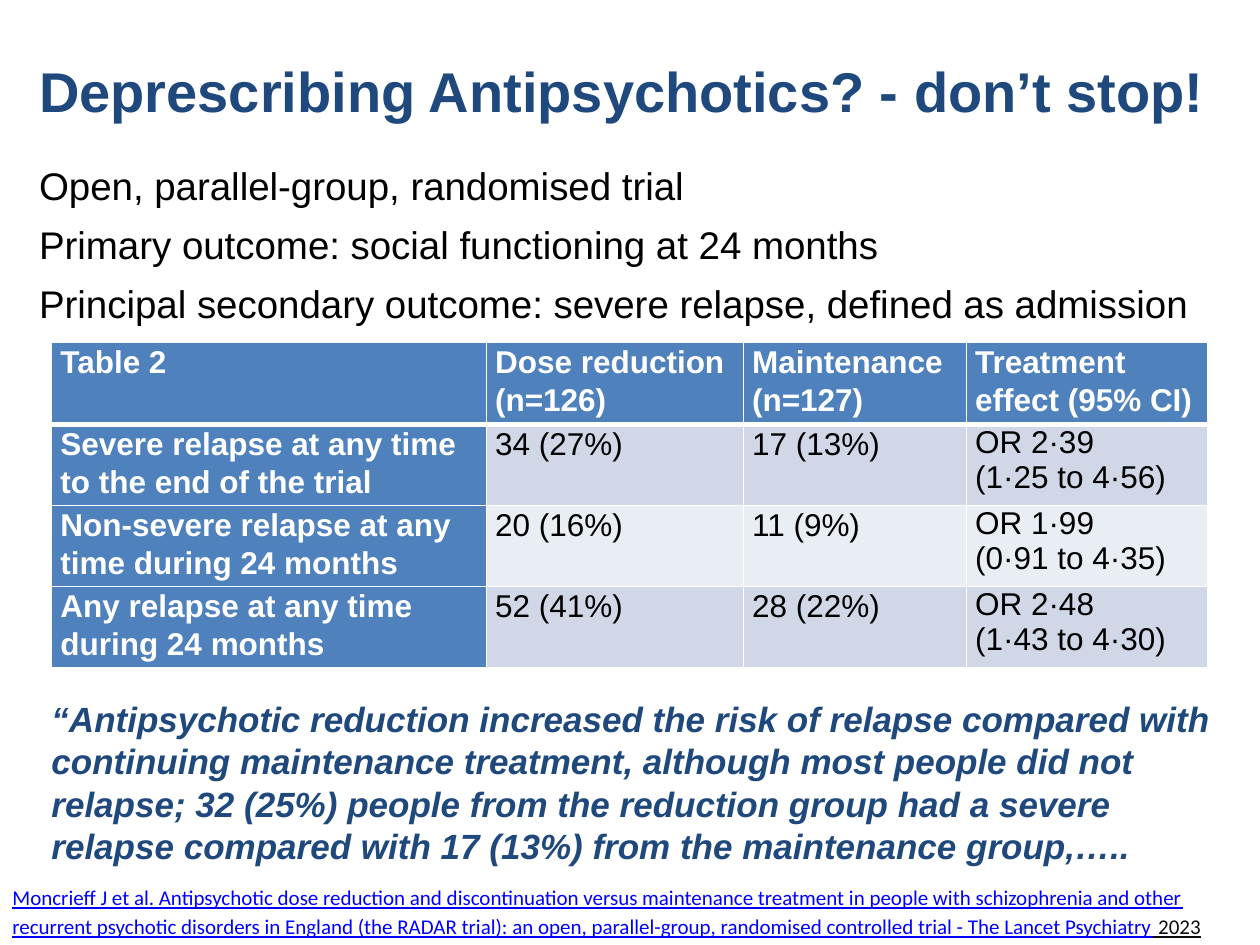
from dataclasses import dataclass

from pptx import Presentation
from pptx.dml.color import RGBColor as Rgb
from pptx.enum.shapes import MSO_SHAPE as Geo
from pptx.enum.text import MSO_ANCHOR as Anchor, PP_ALIGN as Align
from pptx.oxml import parse_xml
from pptx.oxml.ns import nsdecls
from pptx.util import Inches, Pt


@dataclass(frozen=True)
class Theme:
    sans: str = "Arial"
    small: str = "Calibri"
    navy: str = "1F497D"
    blue: str = "4F81BD"
    bands: tuple = ("D0D8E8", "E9EDF4")
    link: str = "0000FF"
    year: str = "0A0A0A"
    black: str = "000000"
    white: str = "FFFFFF"
    title: int = 32
    body: int = 22
    quote: int = 20
    cell: int = 18
    cite: int = 12


@dataclass(frozen=True)
class Style:
    size: int
    color: str
    font: str = Theme.sans
    bold: bool = False
    italic: bool = False
    under: bool = False


@dataclass(frozen=True)
class Area:
    left: float
    top: float
    width: float
    height: float

    def emu(self) -> tuple:
        return tuple(map(Inches, (self.left, self.top, self.width, self.height)))


@dataclass(frozen=True)
class Result:
    label: str
    reduced: str
    kept: str
    effect: str


THEME = Theme()
HEAD = Style(THEME.cell, THEME.white, bold=True)
DATA = Style(THEME.cell, THEME.black)

TITLE = "Deprescribing Antipsychotics? - don’t stop!"
POINTS = (
    "Open, parallel-group, randomised trial",
    "Primary outcome: social functioning at 24 months",
    "Principal secondary outcome: severe relapse, defined as admission",
)
CITE = (
    "Moncrieff J et al. Antipsychotic dose reduction and discontinuation versus "
    "maintenance treatment in people with schizophrenia and other recurrent "
    "psychotic disorders in England (the RADAR trial): an open, parallel-group, "
    "randomised controlled trial - The Lancet Psychiatry"
)
QUOTE = (
    "“Antipsychotic reduction increased the risk of relapse compared with "
    "continuing maintenance treatment, although most people did not relapse; "
    "32 (25%) people from the reduction group had a severe relapse compared "
    "with 17 (13%) from the maintenance group,….."
)
HEADS = ("Table 2", "Dose reduction (n=126)", "Maintenance (n=127)",
         "Treatment effect (95% CI)")
RESULTS = (
    Result("Severe relapse at any time to the end of the trial",
           "34 (27%)", "17 (13%)", "OR 2·39\n(1·25 to 4·56)"),
    Result("Non-severe relapse at any time during 24 months",
           "20 (16%)", "11 (9%)", "OR 1·99\n(0·91 to 4·35)"),
    Result("Any relapse at any time during 24 months",
           "52 (41%)", "28 (22%)", "OR 2·48\n(1·43 to 4·30)"),
)
COLS = (3.45, 2.04, 1.77, 1.92)
ROWS = (0.65, 0.64, 0.64, 0.64)


def paint(run, style: Style) -> None:
    font = run.font
    font.name, font.size = style.font, Pt(style.size)
    font.bold, font.italic, font.underline = style.bold, style.italic, style.under
    font.color.rgb = Rgb.from_string(style.color)


def write(frame, text: str, style: Style) -> None:
    frame.text = text
    for para in frame.paragraphs:
        para.alignment = Align.LEFT
        for run in para.runs:
            paint(run, style)


def space(frame, lines: float, after: float) -> None:
    for para in frame.paragraphs:
        para.line_spacing, para.space_after = lines, Pt(after)


def add_text(slide, area: Area, text: str, style: Style):
    """Add a text box without margins and return its frame."""
    frame = slide.shapes.add_textbox(*area.emu()).text_frame
    frame.word_wrap = True
    frame.margin_left = frame.margin_top = 0
    frame.margin_right = frame.margin_bottom = 0
    write(frame, text, style)
    return frame


def add_panel(slide, area: Area, text: str, style: Style):
    """Add a white rectangle with text and return its frame."""
    shape = slide.shapes.add_shape(Geo.RECTANGLE, *area.emu())
    shape.shadow.inherit = False
    shape.fill.solid()
    shape.fill.fore_color.rgb = Rgb.from_string(THEME.white)
    shape.line.fill.background()
    frame = shape.text_frame
    frame.word_wrap = True
    frame.vertical_anchor = Anchor.TOP
    write(frame, text, style)
    return frame


def edge(cell, top: int, bottom: int) -> None:
    """Draw white borders; top and bottom are widths in points."""
    props = cell._tc.get_or_add_tcPr()
    sides = (("lnL", 1), ("lnR", 1), ("lnT", top), ("lnB", bottom))
    for spot, (tag, width) in enumerate(sides):
        props.insert(spot, parse_xml(
            f'<a:{tag} {nsdecls("a")} w="{Pt(width)}"><a:solidFill>'
            f'<a:srgbClr val="{THEME.white}"/></a:solidFill></a:{tag}>'))


def fill_cell(cell, row: int, col: int, text: str) -> None:
    head = row == 0 or col == 0
    cell.margin_left = cell.margin_right = Inches(0.07)
    cell.margin_top = cell.margin_bottom = 0
    cell.fill.solid()
    tint = THEME.blue if head else THEME.bands[(row - 1) % 2]
    cell.fill.fore_color.rgb = Rgb.from_string(tint)
    frame = cell.text_frame
    write(frame, text, HEAD if head else DATA)
    if head or col < len(COLS) - 1:
        space(frame, 1.07, 8)
    if not head and col < len(COLS) - 1:
        frame.paragraphs[0].alignment = Align.JUSTIFY
    edge(cell, 3 if row == 1 else 1, 3 if row == 0 else 1)


def add_results(slide) -> None:
    area = Area(0.41, 2.72, sum(COLS), sum(ROWS))
    table = slide.shapes.add_table(len(ROWS), len(COLS), *area.emu()).table
    for col, width in zip(table.columns, COLS):
        col.width = Inches(width)
    for row, height in zip(table.rows, ROWS):
        row.height = Inches(height)
    lines = [HEADS] + [(r.label, r.reduced, r.kept, r.effect) for r in RESULTS]
    for row, line in enumerate(lines):
        for col, text in enumerate(line):
            fill_cell(table.cell(row, col), row, col, text)


def main() -> None:
    deck = Presentation()
    deck.slide_width, deck.slide_height = Inches(10), Inches(7.5)
    slide = deck.slides.add_slide(deck.slide_layouts[6])

    title = add_text(slide, Area(0.31, 0.28, 9.38, 0.87), TITLE,
                     Style(THEME.title, THEME.navy, bold=True))
    title.vertical_anchor = Anchor.MIDDLE
    points = add_text(slide, Area(0.31, 1.27, 9.38, 1.64), "\n".join(POINTS),
                      Style(THEME.body, THEME.black))
    space(points, 1.05, 6)

    cite = add_panel(slide, Area(0, 6.94, 10, 0.55), CITE,
                     Style(THEME.cite, THEME.link, THEME.small, under=True))
    year = cite.paragraphs[0].add_run()
    year.text = " 2023"
    paint(year, Style(THEME.cite, THEME.year, THEME.small, under=True))
    space(cite, 1.15, 7.5)

    add_results(slide)
    add_panel(slide, Area(0.31, 5.49, 9.48, 1.45), QUOTE,
              Style(THEME.quote, THEME.navy, bold=True, italic=True))
    deck.save("out.pptx")


if __name__ == "__main__":
    main()
